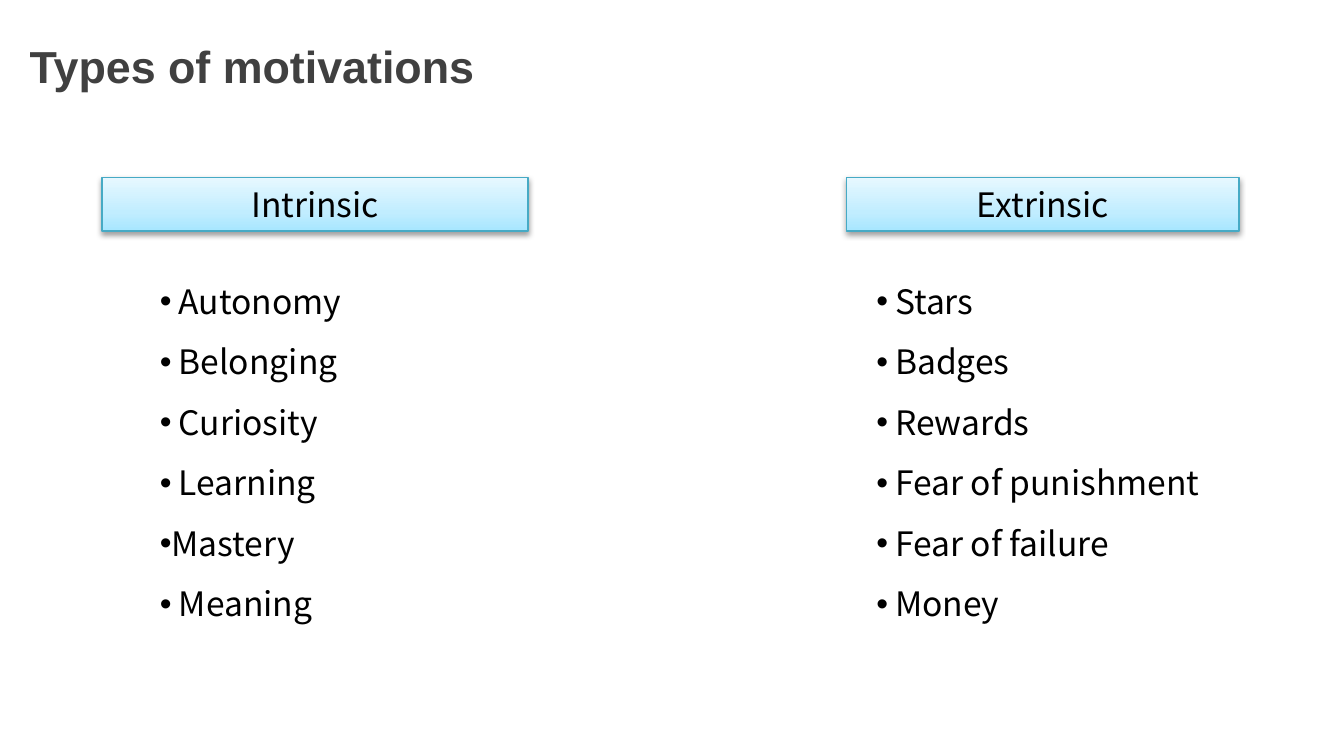
from copy import deepcopy

from lxml import etree
from pptx import Presentation
from pptx.dml.color import RGBColor
from pptx.enum.shapes import MSO_SHAPE
from pptx.enum.text import MSO_ANCHOR, MSO_AUTO_SIZE, PP_ALIGN
from pptx.oxml import parse_xml
from pptx.oxml.ns import nsdecls, qn
from pptx.util import Inches, Pt

RECTANGLE = MSO_SHAPE.RECTANGLE
TOP, MIDDLE = MSO_ANCHOR.TOP, MSO_ANCHOR.MIDDLE
LEFT, CENTER = PP_ALIGN.LEFT, PP_ALIGN.CENTER
NO_FIT = MSO_AUTO_SIZE.NONE

BLACK = RGBColor(0x00, 0x00, 0x00)
TITLE_GRAY = RGBColor(0x40, 0x40, 0x40)
BORDER_BLUE = RGBColor(0x46, 0xAA, 0xC5)
GRADIENT = [
    (0, RGBColor(0xA7, 0xE6, 0xFF)),
    (0.35, RGBColor(0xC1, 0xED, 0xFF)),
    (1, RGBColor(0xE7, 0xF8, 0xFF)),
]
SHADOW = (
    f'<a:outerShdw {nsdecls("a")} blurRad="40000" dist="20000" dir="5400000" rotWithShape="0">'
    '<a:srgbClr val="000000"><a:alpha val="38000"/></a:srgbClr></a:outerShdw>'
)
TITLE_FONT = "Arial"
BODY_FONT = "Noto Sans CJK KR"
BULLET_INDENT = 0.14
SLIDE_WIDTH = 10


class MotivationSlide:
    def __init__(self, slide):
        self.slide = slide

    def place(self, shape, left, top, width, height):
        shape.left, shape.top = Inches(left), Inches(top)
        shape.width, shape.height = Inches(width), Inches(height)

    def style(self, paragraph, font_name, size, color, align, bold=False):
        paragraph.alignment = align
        for run in paragraph.runs:
            run.font.name = font_name
            run.font.size = Pt(size)
            run.font.bold = bold
            run.font.color.rgb = color

    def title(self, text, box):
        title = self.slide.shapes.title
        self.place(title, *box)
        frame = title.text_frame
        frame.text = text
        frame.auto_size = NO_FIT
        frame.vertical_anchor = MIDDLE
        self.style(frame.paragraphs[0], TITLE_FONT, 24, TITLE_GRAY, LEFT, True)

    def header(self, text, box):
        header = self.slide.shapes.add_shape(RECTANGLE, *map(Inches, box))
        header.fill.gradient()
        header.fill.gradient_angle = 90
        properties = header.element.spPr
        stops = properties.find(qn("a:gradFill")).find(qn("a:gsLst"))
        stops.insert(1, deepcopy(stops[0]))
        for stop, (position, color) in zip(header.fill.gradient_stops, GRADIENT):
            stop.position = position
            stop.color.rgb = color
        header.line.color.rgb = BORDER_BLUE
        header.line.width = Pt(0.75)
        header.shadow.inherit = False
        properties.find(qn("a:effectLst")).append(parse_xml(SHADOW))
        header.text_frame.text = text
        header.text_frame.vertical_anchor = TOP
        self.style(header.text_frame.paragraphs[0], BODY_FONT, 18, BLACK, CENTER)

    def bullets(self, index, items, box):
        body = self.slide.placeholders[index]
        self.place(body, *box)
        frame = body.text_frame
        frame.text = "\n".join(items)
        frame.auto_size = NO_FIT
        frame.vertical_anchor = TOP
        for paragraph in frame.paragraphs:
            indent = 0 if paragraph.text == "Mastery" else Inches(BULLET_INDENT)
            properties = paragraph._p.get_or_add_pPr()
            properties.set("marL", str(indent))
            properties.set("indent", str(-indent))
            etree.SubElement(properties, qn("a:buFont"), typeface="Arial")
            etree.SubElement(properties, qn("a:buChar"), char="•")
            paragraph.line_spacing = 1.5
            paragraph.space_before = Pt(0)
            self.style(paragraph, BODY_FONT, 18, BLACK, LEFT)


def main():
    presentation = Presentation()
    presentation.slide_width = Inches(SLIDE_WIDTH)
    presentation.slide_height = Inches(SLIDE_WIDTH * 9 / 16)
    page = MotivationSlide(presentation.slides.add_slide(presentation.slide_layouts[3]))

    page.title("Types of motivations", (0.12, 0, 3.7, 0.97))
    page.header("Intrinsic", (0.76, 1.32, 3.17, 0.4))
    page.header("Extrinsic", (6.3, 1.32, 2.92, 0.4))
    intrinsic = ["Autonomy", "Belonging", "Curiosity", "Learning", "Mastery", "Meaning"]
    extrinsic = ["Stars", "Badges", "Rewards", "Fear of punishment", "Fear of failure", "Money"]
    page.bullets(1, intrinsic, (1.09, 1.89, 2.5, 3.28))
    page.bullets(2, extrinsic, (6.42, 1.89, 2.67, 2.83))

    presentation.save("out.pptx")


if __name__ == "__main__":
    main()
